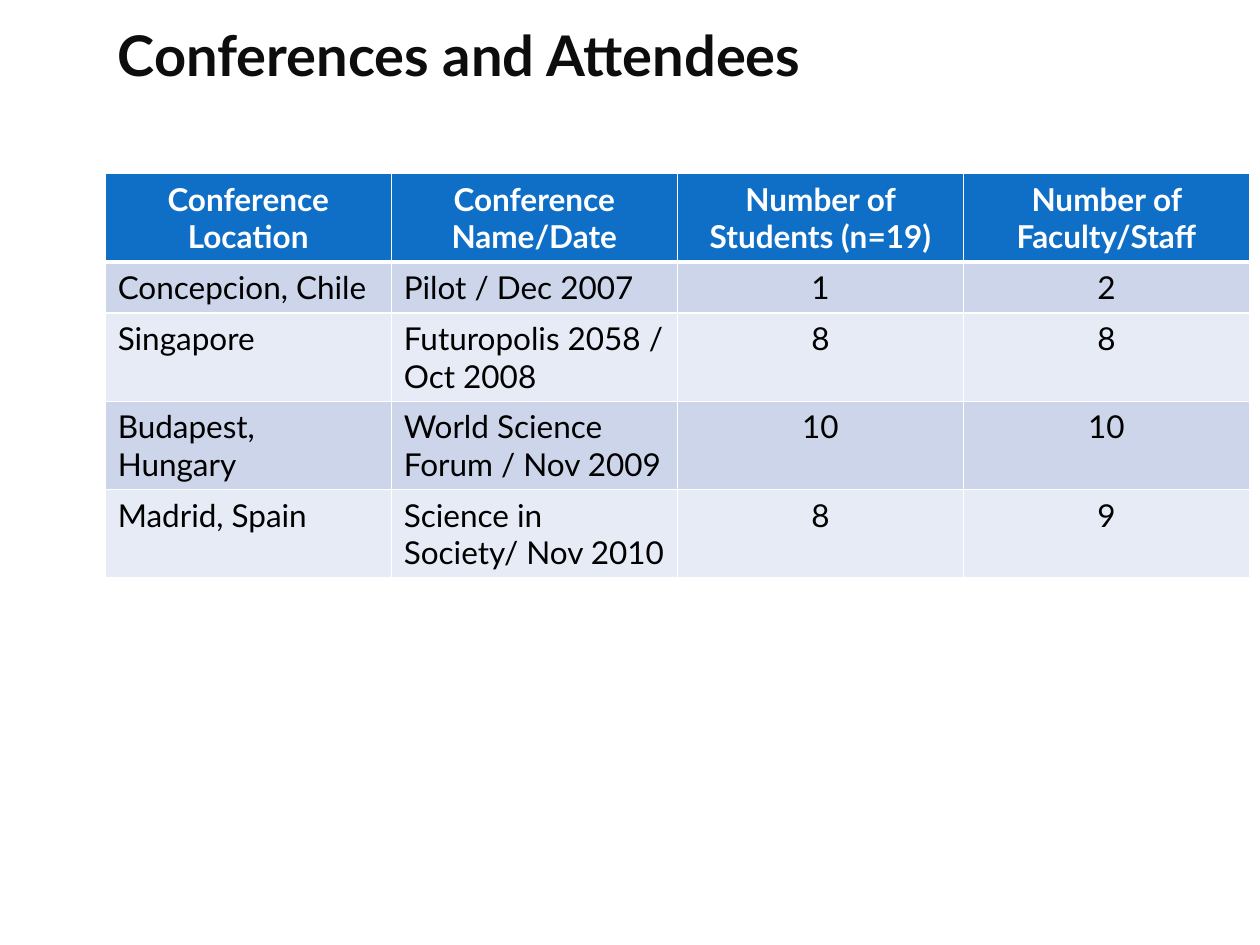
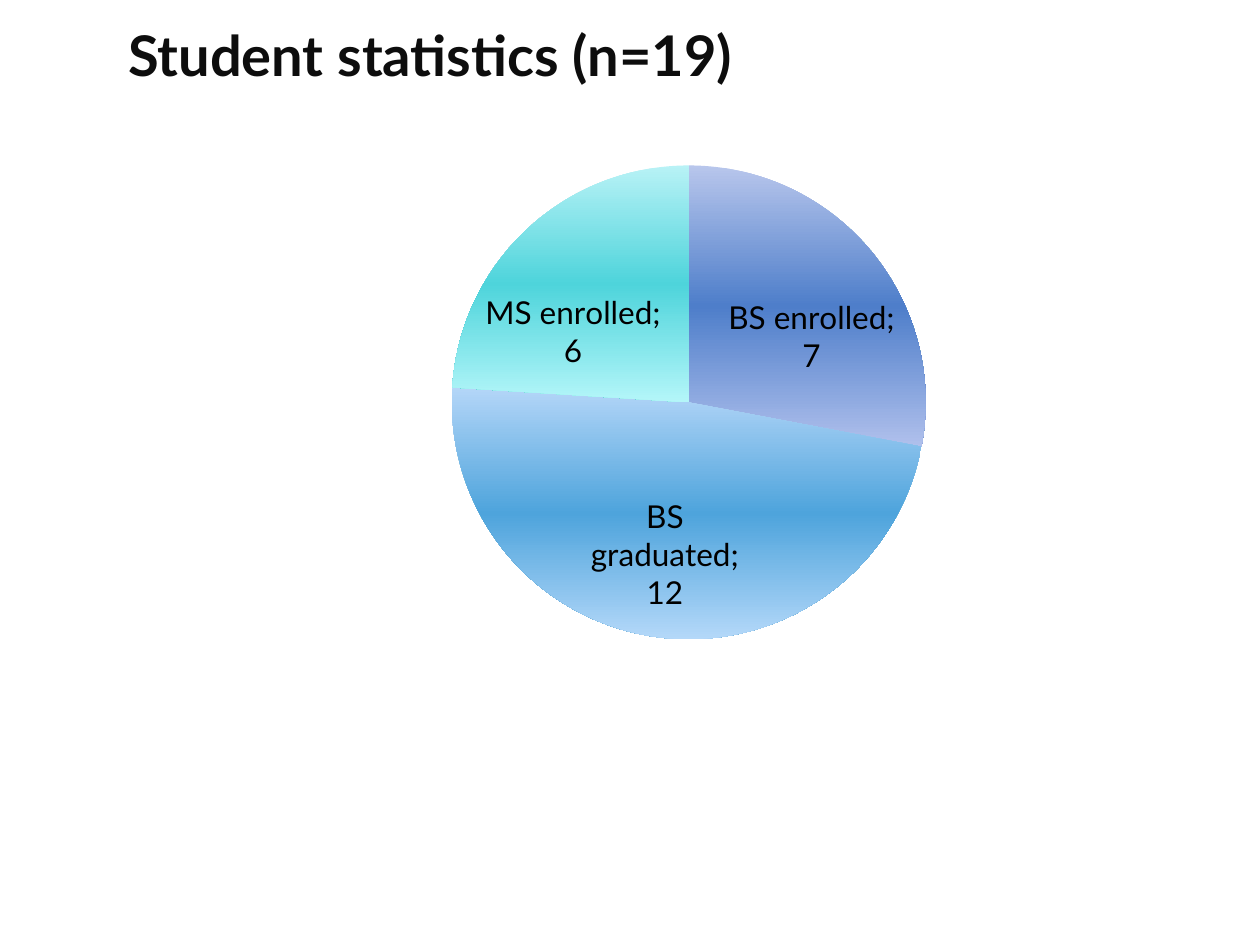
"""Build two slides on conference attendance and student statistics."""
from copy import deepcopy
from dataclasses import dataclass

from lxml import etree
from pptx import Presentation
from pptx.chart.data import CategoryChartData
from pptx.dml.color import RGBColor as RGB
from pptx.enum.chart import XL_CHART_TYPE as CT, XL_LABEL_POSITION as LP
from pptx.enum.text import MSO_ANCHOR as ANCHOR, MSO_AUTO_SIZE as AUTO, PP_ALIGN as ALIGN
from pptx.oxml import parse_xml
from pptx.oxml.ns import nsdecls, qn
from pptx.util import Cm, Pt


@dataclass(frozen=True)
class Theme:
    font: str = "Lato"
    title_size: int = 32
    body_size: int = 18
    title: str = "0D0D0D"
    text: str = "000000"
    white: str = "FFFFFF"
    header: str = "0F6FC6"
    bands: tuple = ("CCD5EA", "E7EBF5")
    slices: tuple = (
        ("B8C6EC", "4E7ECA", "B0C0EC"),
        ("B4D6F8", "4EA4DC", "B4D8F9"),
        ("B8F2F6", "4ED4DB", "B4F6F9"),
    )
    line: int = 1
    header_line: int = 3


class Deck:
    def __init__(self, theme):
        self.theme = theme
        self.prs = Presentation()
        self.prs.slide_width, self.prs.slide_height = Cm(25.4), Cm(19.05)
        self.s = None

    def slide(self, title, left):
        self.s = self.prs.slides.add_slide(self.prs.slide_layouts[5])
        sp = self.s.shapes.title
        sp.left, sp.top, sp.width, sp.height = Cm(left), Cm(0.2), Cm(22.86), Cm(1.78)
        tf = sp.text_frame
        tf.auto_size = AUTO.NONE
        tf.vertical_anchor = ANCHOR.MIDDLE
        self.text(tf, title, self.theme.title_size, self.theme.title, True, ALIGN.LEFT)

    def text(self, tf, text, size, color, bold, align):
        p = tf.paragraphs[0]
        p.alignment = align
        r = p.add_run()
        r.text = text
        self.style(r.font, size, color)
        r.font.bold = bold

    def style(self, font, size, color):
        font.name, font.size = self.theme.font, Pt(size)
        font.color.rgb = RGB.from_string(color)

    def borders(self, cell, top, bottom):
        t = self.theme
        tc_pr = cell._tc.get_or_add_tcPr()
        for side, width in zip("LRTB", (t.line, t.line, top, bottom)):
            tc_pr.append(parse_xml(
                f'<a:ln{side} {nsdecls("a")} w="{Pt(width)}"><a:solidFill>'
                f'<a:srgbClr val="{t.white}"/></a:solidFill></a:ln{side}>'))

    def table(self, rows, heights, centred, left, top, width):
        t = self.theme
        frame = self.s.shapes.add_table(
            len(rows), len(rows[0]), Cm(left), Cm(top), Cm(width), Cm(sum(heights)))
        table = frame.table
        for i, (row, height) in enumerate(zip(rows, heights)):
            table.rows[i].height = Cm(height)
            head = i == 0
            fill = t.header if head else t.bands[(i - 1) % 2]
            for j, value in enumerate(row):
                cell = table.cell(i, j)
                self.borders(cell, t.header_line if i == 1 else t.line,
                             t.header_line if head else t.line)
                cell.fill.solid()
                cell.fill.fore_color.rgb = RGB.from_string(fill)
                align = ALIGN.CENTER if head or j in centred else ALIGN.LEFT
                self.text(cell.text_frame, value, t.body_size,
                          t.white if head else t.text, head, align)

    def pie(self, name, values, plot_box, left, top, width, height):
        t = self.theme
        data = CategoryChartData()
        data.categories = list(values)
        data.add_series(name, list(values.values()))
        chart = self.s.shapes.add_chart(
            CT.PIE, Cm(left), Cm(top), Cm(width), Cm(height), data).chart
        chart.has_legend = chart.has_title = False
        self.style(chart.font, t.body_size, t.text)
        plot = chart.plots[0]
        plot.vary_by_categories = True
        series = plot.series[0]
        for i, colors in enumerate(t.slices):
            self.gradient(series.points[i].format.fill, series, colors)
        labels = series.data_labels
        labels.show_value = labels.show_category_name = True
        labels.position = LP.BEST_FIT
        self.style(labels.font, t.body_size, t.text)
        separator = etree.Element(qn("c:separator"))
        separator.text = "; "
        labels._element.find(qn("c:showBubbleSize")).addnext(separator)
        self.place_plot(chart, plot_box)

    def gradient(self, fill, series, colors):
        fill.gradient()
        fill.gradient_angle = 270
        stops = list(series._element.iter(qn("a:gsLst")))[-1]
        stops.append(deepcopy(stops[-1]))
        for i, (stop, color) in enumerate(zip(fill.gradient_stops, colors)):
            stop.position = i / 2
            stop.color.rgb = RGB.from_string(color)

    def place_plot(self, chart, box):
        area = chart._chartSpace.find(f'{qn("c:chart")}/{qn("c:plotArea")}')
        for old in area.findall(qn("c:layout")):
            area.remove(old)
        sizes = "".join(f'<c:{k} val="{v}"/>' for k, v in zip("xywh", box))
        area.insert(0, parse_xml(
            f'<c:layout {nsdecls("c")}><c:manualLayout><c:layoutTarget val="inner"/>'
            f'<c:xMode val="edge"/><c:yMode val="edge"/>{sizes}'
            '</c:manualLayout></c:layout>'))


def main():
    deck = Deck(Theme())
    deck.slide("Conferences and Attendees", 2.12)
    conferences = [
        ("Conference Location", "Conference Name/Date",
         "Number of Students (n=19)", "Number of Faculty/Staff"),
        ("Concepcion, Chile", "Pilot / Dec 2007", "1", "2"),
        ("Singapore", "Futuropolis 2058 / Oct 2008", "8", "8"),
        ("Budapest, Hungary", "World Science Forum / Nov 2009", "10", "10"),
        ("Madrid, Spain", "Science in Society/ Nov 2010", "8", "9"),
    ]
    one_line, two_lines = 1.03, 1.78
    heights = [two_lines, one_line] + [two_lines] * 3
    deck.table(conferences, heights, (2, 3), 2.12, 3.5, 23.07)

    deck.slide("Student statistics (n=19)", 2.33)
    students = {"BS enrolled": 7, "BS graduated": 12, "MS enrolled": 6}
    deck.pie("Series 1", students, (0.3, 0.08, 0.42, 0.76), 2.12, 2.33, 23.07, 12.57)
    deck.prs.save("out.pptx")


if __name__ == "__main__":
    main()
